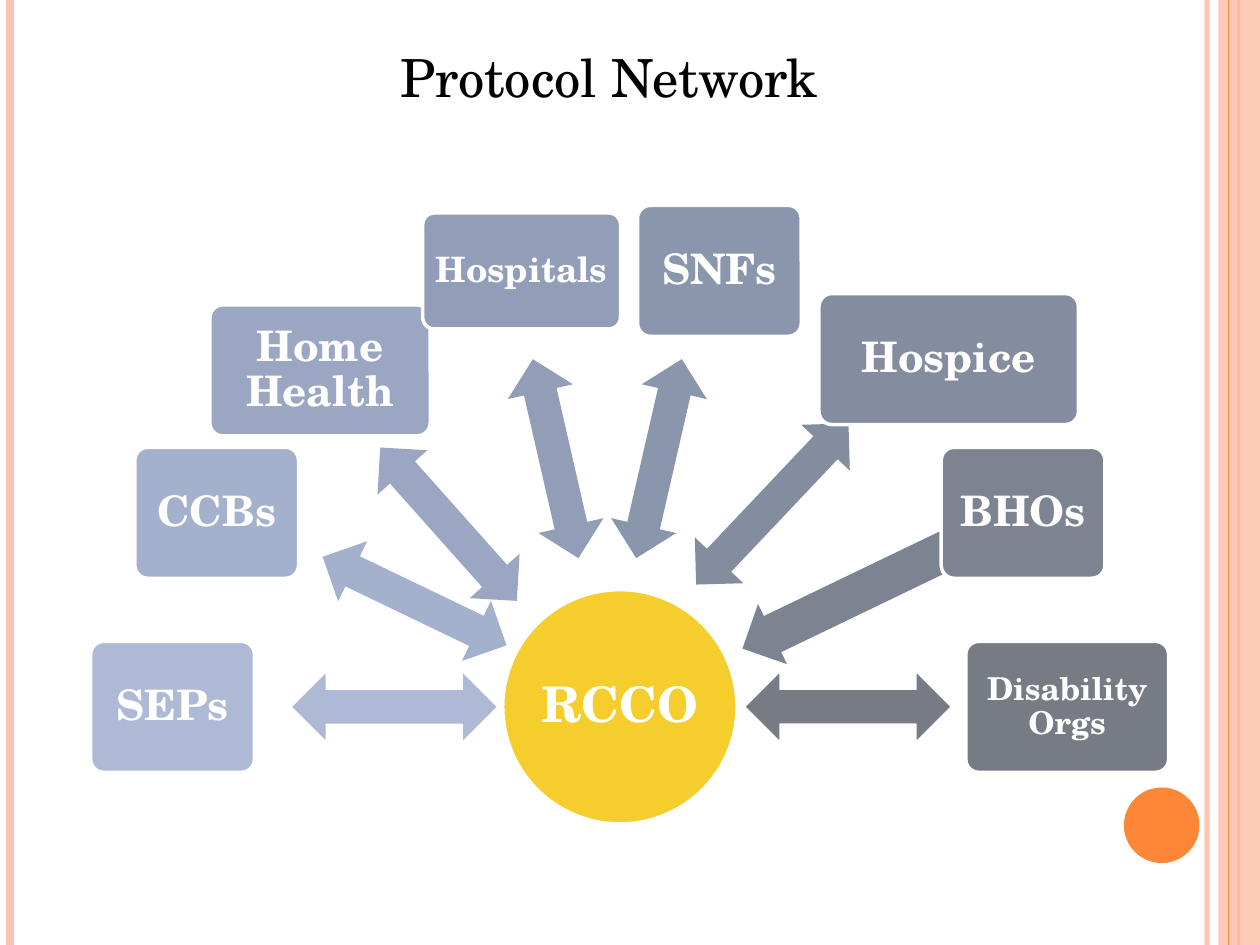
from lxml.etree import SubElement
from pptx import Presentation
from pptx.dml.color import RGBColor
from pptx.enum.shapes import MSO_CONNECTOR, MSO_SHAPE
from pptx.enum.text import MSO_ANCHOR, PP_ALIGN
from pptx.oxml.ns import qn
from pptx.util import Inches, Pt

WHITE = RGBColor(0xFF, 0xFF, 0xFF)
BLACK = RGBColor(0x00, 0x00, 0x00)
PEACH = RGBColor(0xFE, 0xC3, 0xAE)
ORANGE = RGBColor(0xFE, 0x86, 0x37)
GOLD = RGBColor(0xF5, 0xCD, 0x2D)
SHADES = [RGBColor.from_string(c) for c in (
    "AEBAD5", "A4B1CC", "9BA7C2", "929EB7",
    "8A96AB", "838D9F", "7C8492", "777C84")]

COLS, ROWS = 100, 75  # grid over the slide
BOX_H, ARROW_H = 10.4, 5.3
BOTH, LEFT = MSO_SHAPE.LEFT_RIGHT_ARROW, MSO_SHAPE.LEFT_ARROW

# label, text size, box centre and size, arrow centre, length, turn, kind
SPOKES = [
    ("SEPs", 24, (13.7, 56.1, 13, BOX_H), (31.3, 56.1, 16.2, 180, BOTH)),
    ("CCBs", 24, (17.2, 40.7, 13, BOX_H), (32.9, 47.7, 16.2, 205.7, BOTH)),
    ("Home Health", 24, (25.4, 29.4, 17.5, BOX_H), (35.6, 41.6, 16.3, 228.3, BOTH)),
    ("Hospitals", 20, (41.4, 21.5, 15.7, 9.2), (44.1, 36.4, 16.2, 257.1, BOTH)),
    ("SNFs", 24, (57.1, 21.5, 13, BOX_H), (52.3, 36.4, 16.2, 282.9, BOTH)),
    ("Hospice", 24, (75.3, 28.5, 20.6, BOX_H), (61.3, 40, 17.6, 313.4, BOTH)),
    ("BHOs", 24, (81.2, 40.7, 13, BOX_H), (70.1, 46.1, 24.8, 334.3, LEFT)),
    ("Disability Orgs", 18, (84.7, 56.1, 16.1, BOX_H), (67.3, 56.1, 16.2, 0, BOTH)),
]


class Deck:
    font = "TeX Gyre Schola"

    def __init__(self):
        self.prs = Presentation()
        self.prs.slide_width, self.prs.slide_height = Inches(10), Inches(7.5)
        self.slide = self.prs.slides.add_slide(self.prs.slide_layouts[6])

    def x(self, cols):
        return round(self.prs.slide_width * cols / COLS)

    def y(self, rows):
        return round(self.prs.slide_height * rows / ROWS)

    def fade(self, props, share):
        """Make the solid colour of a fill or line partly clear."""
        rgb = props.find(".//" + qn("a:srgbClr"))
        SubElement(rgb, qn("a:alpha"), val=str(share * 1000))

    def rule(self, col, color, width, share=100):
        """Draw a line from top to bottom of the slide."""
        line = self.slide.shapes.add_connector(
            MSO_CONNECTOR.STRAIGHT, self.x(col), 0, self.x(col), self.y(ROWS))
        line.line.color.rgb = color
        line.line.width = Pt(width)
        props = line._element.spPr
        SubElement(props, qn("a:effectLst"))
        if share < 100:
            self.fade(props, share)

    def shape(self, kind, cx, cy, w, h, color, edge=0, share=100):
        """Draw a preset shape around its centre."""
        item = self.slide.shapes.add_shape(
            kind, self.x(cx - w / 2), self.y(cy - h / 2), self.x(w), self.y(h))
        item.shadow.inherit = False
        item.fill.solid()
        item.fill.fore_color.rgb = color
        if edge:
            item.line.color.rgb = WHITE
            item.line.width = Pt(edge)
        else:
            item.line.fill.background()
        if share < 100:
            self.fade(item._element.spPr, share)
        return item

    def label(self, item, text, size, color=WHITE, bold=True, inset=0.05, space=0.9):
        """Put centred text into a shape or text box."""
        frame = item.text_frame
        frame.word_wrap = True
        frame.vertical_anchor = MSO_ANCHOR.MIDDLE
        frame.margin_left = frame.margin_right = Inches(inset)
        frame.margin_top = frame.margin_bottom = Inches(inset)
        para = frame.paragraphs[0]
        para.alignment = PP_ALIGN.CENTER
        para.line_spacing = space
        run = para.add_run()
        run.text = text
        run.font.name, run.font.size = self.font, Pt(size)
        run.font.bold, run.font.color.rgb = bold, color

    def title(self, text, x, y, w, h):
        box = self.slide.shapes.add_textbox(
            self.x(x), self.y(y), self.x(w), self.y(h))
        self.label(box, text, 30, BLACK, bold=False, space=1.0)

    def arrow(self, cx, cy, size, turn, kind, color):
        item = self.shape(kind, cx, cy, size, ARROW_H, color)
        item.rotation = turn
        if kind == LEFT:
            item.adjustments[0] = 0.6

    def card(self, text, size, place, color):
        item = self.shape(MSO_SHAPE.ROUNDED_RECTANGLE, *place, color, edge=2)
        item.adjustments[0] = 0.1
        self.label(item, text, size, inset=0.05 if size > 20 else 0.04)


def main():
    deck = Deck()

    # Side bands and corner dot
    deck.rule(95.8, PEACH, 3, share=93)
    deck.rule(0.8, PEACH, 4.5)
    deck.rule(98.3, ORANGE, 1.5)
    deck.shape(MSO_SHAPE.RECTANGLE, 98.35, ROWS / 2, 3.3, ROWS, PEACH, share=87)
    deck.rule(97.5, ORANGE, 0.75)
    deck.shape(MSO_SHAPE.OVAL, 92.2, 65.5, 6, 6, ORANGE)

    # Title
    deck.title("Protocol Network", 5, 0.5, 86.7, 11.2)

    # Hub
    hub = deck.shape(MSO_SHAPE.OVAL, 49.2, 56.1, 18.6, 18.6, GOLD, edge=2)
    deck.label(hub, "RCCO", 28, inset=0.02)

    # Spokes: each arrow lies behind its card
    for (name, size, place, arrow), color in zip(SPOKES, SHADES):
        deck.arrow(*arrow, color)
        deck.card(name, size, place, color)

    deck.prs.save("out.pptx")


if __name__ == "__main__":
    main()
